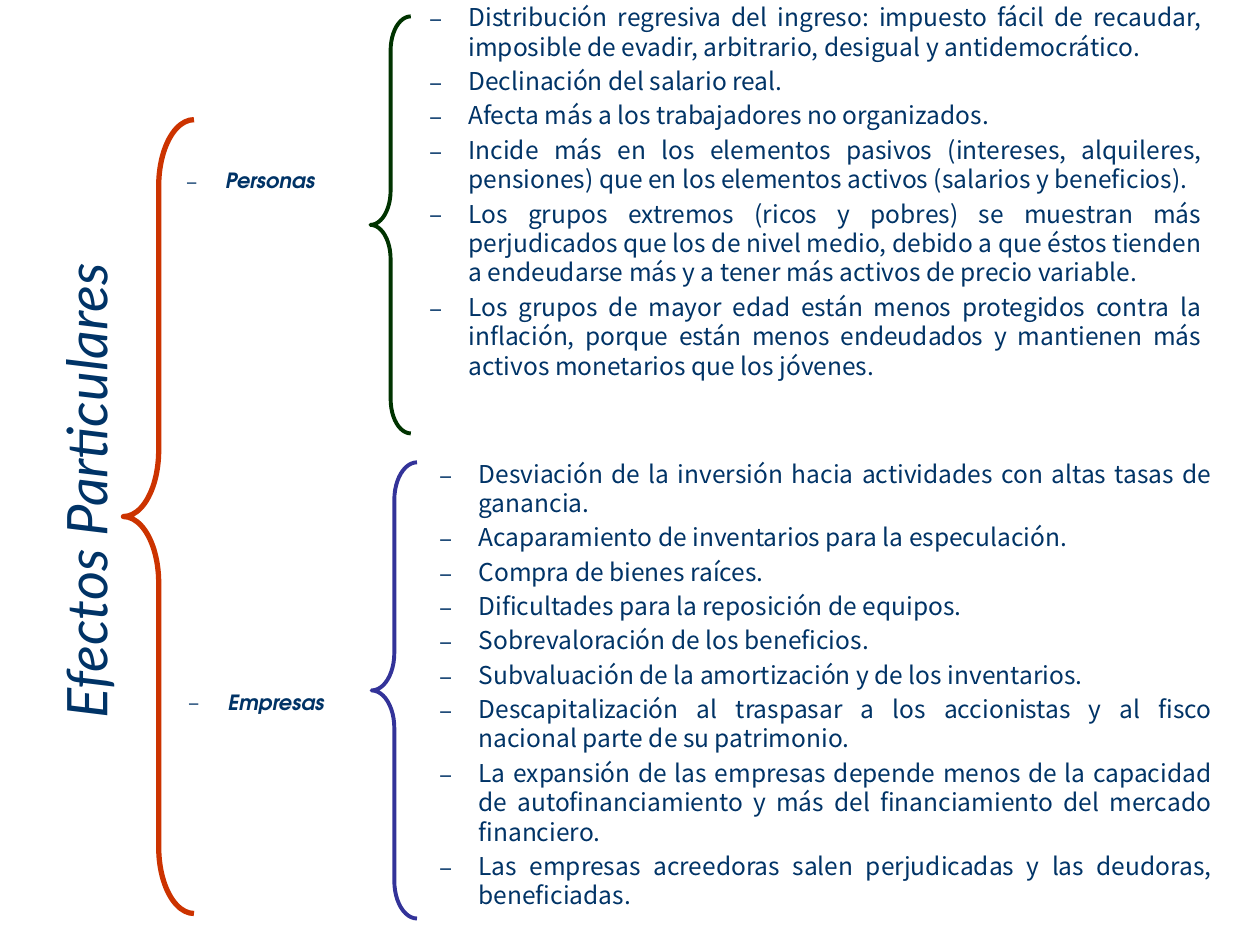
from lxml import etree
from pptx import Presentation
from pptx import util as u
from pptx.dml.color import RGBColor
from pptx.enum import shapes, text
from pptx.oxml.ns import qn

NAVY = RGBColor(0x00, 0x33, 0x66)
RED = RGBColor(0xCC, 0x33, 0x00)
GREEN = RGBColor(0x00, 0x33, 0x00)
INDIGO = RGBColor(0x33, 0x33, 0x99)

W, H = u.Inches(10), u.Inches(7.5)
BODY, LABEL, TITLE = "Noto Sans CJK KR", "TeX Gyre Adventor", "Lato"
JUSTIFY = text.PP_ALIGN.JUSTIFY

PEOPLE = [
    "Distribución regresiva del ingreso: impuesto fácil de recaudar, imposible de evadir, arbitrario, desigual y antidemocrático.",
    "Declinación del salario real.",
    "Afecta más a los trabajadores no organizados.",
    "Incide más en los elementos pasivos (intereses, alquileres, pensiones) que en los elementos activos (salarios y beneficios).",
    "Los grupos extremos (ricos y pobres) se muestran más perjudicados que los de nivel medio, debido a que éstos tienden a endeudarse más y a tener más activos de precio variable.",
    "Los grupos de mayor edad están menos protegidos contra la inflación, porque están menos endeudados y mantienen más activos monetarios que los jóvenes.",
]
COMPANIES = [
    "Desviación de la inversión hacia actividades con altas tasas de ganancia.",
    "Acaparamiento de inventarios para la especulación.",
    "Compra de bienes raíces.",
    "Dificultades para la reposición de equipos.",
    "Sobrevaloración de los beneficios.",
    "Subvaluación de la amortización y de los inventarios.",
    "Descapitalización al traspasar a los accionistas y al fisco nacional parte de su patrimonio.",
    "La expansión de las empresas depende menos de la capacidad de autofinanciamiento y más del financiamiento del mercado financiero.",
    "Las empresas acreedoras salen perjudicadas y las deudoras, beneficiadas.",
]


def place(left, top, width, height):
    return [round(v / 100 * side) for v, side in
            ((left, W), (top, H), (width, W), (height, H))]


def add_frame(s, box):
    sp = s.shapes.add_textbox(*place(*box))
    sp.text_frame.word_wrap = True
    return sp


def add_run(p, words, font, size, bold=False, italic=False):
    r = p.add_run()
    r.text = words
    r.font.name, r.font.size = font, u.Pt(size)
    r.font.bold, r.font.italic = bold, italic
    r.font.color.rgb = NAVY


def set_dash(p):
    pPr = p._p.get_or_add_pPr()
    pPr.set("marL", str(u.Inches(0.81)))
    pPr.set("indent", str(u.Inches(-0.31)))
    etree.SubElement(pPr, qn("a:buFont")).set("typeface", BODY)
    etree.SubElement(pPr, qn("a:buChar")).set("char", "–")


def add_list(s, box, items, font=BODY, size=14, leading=16.8,
             align=JUSTIFY, emphasis=False):
    tf = add_frame(s, box).text_frame
    for i, words in enumerate(items):
        p = tf.add_paragraph() if i else tf.paragraphs[0]
        p.level, p.alignment = 1, align
        p.space_before = u.Pt(size * 0.2)
        if leading:
            p.line_spacing = u.Pt(leading)
        set_dash(p)
        add_run(p, words, font, size, emphasis, emphasis)


def add_label(s, box, words, align):
    add_list(s, box, [words], LABEL, 12, None, align, True)


def add_title(s, box, words):
    sp = add_frame(s, box)
    sp.rotation = 270
    p = sp.text_frame.paragraphs[0]
    p.alignment = text.PP_ALIGN.CENTER
    add_run(p, words, TITLE, 32, italic=True)


def add_brace(s, box, curve, color, weight):
    sp = s.shapes.add_shape(shapes.MSO_SHAPE.LEFT_BRACE, *place(*box))
    sp.shadow.inherit = False
    sp.adjustments[0], sp.adjustments[1] = curve, 0.5
    sp.fill.background()
    sp.line.color.rgb = color
    sp.line.width = u.Pt(weight)


def main():
    prs = Presentation()
    prs.slide_width, prs.slide_height = W, H
    s = prs.slides.add_slide(prs.slide_layouts[6])
    add_list(s, (28.9, 47.87, 68.3, 39.47), COMPANIES)
    add_list(s, (28.1, -0.4, 68.3, 35.6), PEOPLE)
    add_brace(s, (9.8, 12.67, 5.6, 84), 0.94, RED, 3)
    add_title(s, (-14.6, 47.73, 42.7, 8.4), "Efectos Particulares")
    add_brace(s, (29.5, 48.93, 3.6, 48.27), 0.83, INDIGO, 2.25)
    add_brace(s, (29.4, 1.73, 3.2, 44.13), 0.85, GREEN, 2.25)
    add_label(s, (8.8, 17.07, 19.2, 6.67), "Personas", JUSTIFY)
    add_label(s, (9, 72.27, 19.2, 6.67), "Empresas", text.PP_ALIGN.LEFT)
    prs.save("out.pptx")


if __name__ == "__main__":
    main()
